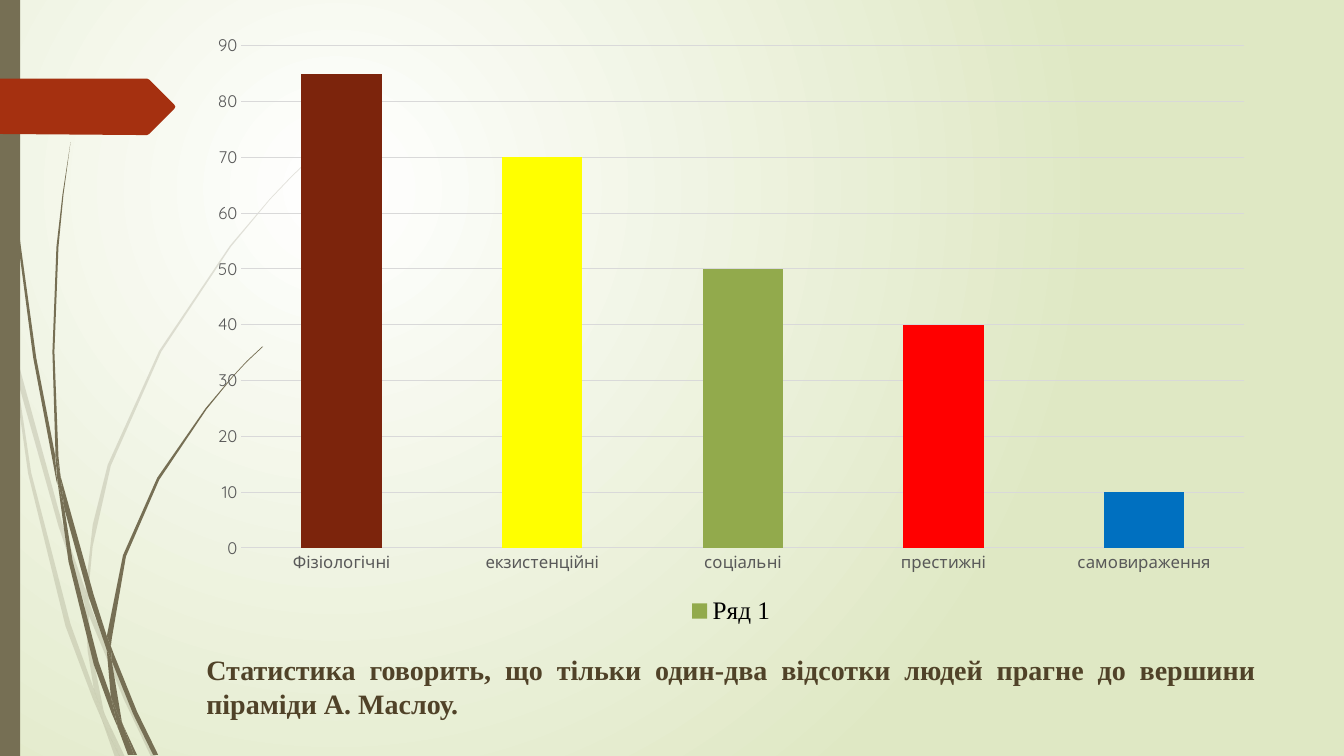
from lxml import etree
from pptx import Presentation
from pptx import util as u
from pptx.chart.data import CategoryChartData
from pptx.dml.color import RGBColor
from pptx.enum import chart as ch, shapes, text
from pptx.oxml.ns import qn

HUES = {
    "white": "FFFFFF", "pale": "DFE8C4", "stem": "766F54", "tag": "A53010",
    "grid": "D9D9D9", "axis": "595959", "black": "000000", "note": "504228",
    "green": "92AA4C", "brown": "7C240C", "yellow": "FFFF00",
    "red": "FF0000", "blue": "0070C0",
}
SANS, SERIF = "Quicksand", "Times New Roman"
NEEDS = {"Фізіологічні": 85, "екзистенційні": 70, "соціальні": 50,
         "престижні": 40, "самовираження": 10}
BARS = {0: "brown", 1: "yellow", 3: "red", 4: "blue"}

# Grass outlines, in hundredths of an inch
FAINT = [
    [(11, 350), (9, 322), (0, 282), (0, 299), (10, 344)],
    [(58, 522), (84, 599), (85, 586), (62, 520), (14, 345), (17, 376)],
    [(92, 607), (88, 596), (88, 610), (123, 694), (150, 751), (155, 751),
     (127, 692)],
    [(119, 751), (124, 751), (105, 711)],
    [(93, 683), (70, 619), (31, 469), (17, 376), (11, 350), (28, 470),
     (65, 621), (92, 693), (101, 714), (99, 707)],
    [(84, 599), (87, 646), (93, 683), (96, 692), (105, 711), (103, 706),
     (91, 646), (88, 610), (88, 608)],
    [(88, 584), (92, 542), (110, 462), (160, 349), (229, 245), (268, 198),
     (290, 175), (312, 154), (312, 153), (289, 175), (268, 197), (228, 244),
     (158, 348), (107, 461), (92, 521), (85, 584), (85, 586), (88, 596)],
    [(101, 714), (114, 751), (119, 751)],
    [(88, 608), (88, 610), (88, 596), (85, 586), (84, 599)],
    [(96, 692), (93, 683), (99, 707), (101, 714), (119, 751), (105, 711)],
]
SOLID = [
    [(7, 110), (17, 233), (33, 355), (56, 477), (57, 481), (55, 457),
     (55, 453), (36, 355), (19, 232), (8, 109), (5, 48), (4, 0), (3, 0),
     (4, 48)],
    [(88, 592), (106, 645), (106, 633), (106, 631), (93, 590), (60, 472),
     (64, 505)],
    [(113, 649), (110, 641), (111, 656), (132, 708), (152, 749), (157, 749),
     (136, 706)],
    [(110, 691), (98, 657), (72, 556), (64, 505), (57, 477), (68, 557),
     (93, 659), (111, 708), (117, 722), (116, 717)],
    [(60, 472), (58, 453), (54, 349), (58, 245), (63, 193), (70, 141),
     (62, 193), (56, 245), (52, 349), (55, 449)],
    [(133, 749), (136, 749), (122, 719)],
    [(57, 477), (64, 505), (60, 472), (55, 449), (55, 453)],
    [(111, 633), (125, 552), (158, 476), (205, 406), (231, 374), (245, 359),
     (261, 344), (260, 344), (245, 358), (231, 373), (204, 405), (156, 474),
     (122, 551), (106, 631), (110, 641)],
    [(117, 722), (127, 749), (131, 749)],
    [(106, 645), (110, 691), (116, 706), (122, 719), (121, 716), (111, 656),
     (109, 651)],
    [(106, 645), (109, 651), (111, 656), (110, 641), (106, 631)],
    [(116, 706), (110, 691), (116, 717), (117, 722), (130, 749), (133, 749),
     (122, 719)],
]
TAG = [(173, 108), (148, 133), (146, 134), (136, 134), (0, 133), (0, 78),
       (136, 78), (146, 78), (148, 79), (173, 104), (174, 106)]


def hue(name):
    return RGBColor.from_string(HUES[name])


def put(thing, **vals):
    for key, val in vals.items():
        setattr(thing, key, val)


class Deck:
    def __init__(self):
        self.show = Presentation()
        put(self.show, slide_width=u.Cm(33.87), slide_height=u.Cm(19.05))
        self.page = self.show.slides.add_slide(self.show.slide_layouts[6])
        self.items = self.page.shapes

    def type(self, font, size, color, face, bold=False):
        put(font, size=u.Pt(size), name=face, bold=bold)
        font.color.rgb = hue(color)

    def glow(self):
        fill = self.page.background.fill
        fill.gradient()
        for stop, name in zip(fill.gradient_stops, ("white", "pale")):
            stop.color.rgb = hue(name)
        grad = self.page.element.find(".//" + qn("a:gradFill"))
        line = grad.find(qn("a:lin"))
        ring = etree.Element(qn("a:path"), path="circle")
        etree.SubElement(ring, qn("a:fillToRect"), l="50000", t="50000",
                         r="100000", b="100000")
        grad.replace(line, ring)

    def paint(self, shape, color, alpha=100):
        shape.shadow.inherit = False
        shape.line.fill.background()
        shape.fill.solid()
        shape.fill.fore_color.rgb = hue(color)
        if alpha < 100:
            tone = shape.element.spPr.find(".//" + qn("a:srgbClr"))
            etree.SubElement(tone, qn("a:alpha"), val=str(alpha * 1000))

    def form(self, dots, color, alpha=100):
        pen = self.items.build_freeform(*dots[0], scale=u.Cm(2.54) / 100)
        pen.add_line_segments(dots[1:], close=True)
        self.paint(pen.convert_to_shape(), color, alpha)

    def block(self, box, color):
        kind = shapes.MSO_SHAPE.RECTANGLE
        self.paint(self.items.add_shape(kind, *map(u.Cm, box)), color)

    def chart(self, box, name, vals, tints):
        data = CategoryChartData()
        data.categories = list(vals)
        data.add_series(name, list(vals.values()))
        kind = ch.XL_CHART_TYPE.COLUMN_STACKED
        chart = self.items.add_chart(kind, *map(u.Cm, box), data).chart
        put(chart, has_title=False, has_legend=True)
        self.type(chart.font, 10, "black", SANS)

        # Bars
        plot = chart.plots[0]
        put(plot, gap_width=150, overlap=100, vary_by_categories=False)
        bars = plot.series[0]
        bars.format.fill.solid()
        bars.format.fill.fore_color.rgb = hue("green")
        for spot, tint in tints.items():
            fill = bars.points[spot].format.fill
            fill.solid()
            fill.fore_color.rgb = hue(tint)

        # Axes and grid
        cats, nums = chart.category_axis, chart.value_axis
        for axis in (cats, nums):
            put(axis, major_tick_mark=ch.XL_TICK_MARK.NONE,
                minor_tick_mark=ch.XL_TICK_MARK.NONE)
            self.type(axis.tick_labels.font, 12, "axis", SANS)
        put(nums, minimum_scale=0, maximum_scale=90, major_unit=10,
            has_major_gridlines=True)
        nums.format.line.fill.background()
        for part in (cats, nums.major_gridlines):
            part.format.line.color.rgb = hue("grid")
            part.format.line.width = u.Pt(0.75)

        # Legend
        put(chart.legend, position=ch.XL_LEGEND_POSITION.BOTTOM,
            include_in_layout=False)
        self.type(chart.legend.font, 18, "black", SERIF)

    def note(self, box, words):
        frame = self.items.add_textbox(*map(u.Cm, box)).text_frame
        put(frame, word_wrap=True,
            auto_size=text.MSO_AUTO_SIZE.SHAPE_TO_FIT_TEXT)
        para = frame.paragraphs[0]
        para.alignment = text.PP_ALIGN.JUSTIFY
        run = para.add_run()
        run.text = words
        self.type(run.font, 20, "note", SERIF, bold=True)


def main():
    deck = Deck()

    # Backdrop
    deck.glow()
    for blades, alpha in ((FAINT, 20), (SOLID, 100)):
        for blade in blades:
            deck.form(blade, "stem", alpha)
    deck.block((0, 0, 0.51, 19.05), "stem")
    deck.form(TAG, "tag")

    # Content
    deck.chart((4.95, 0.58, 26.95, 15.29), "Ряд 1", NEEDS, BARS)
    deck.note((4.95, 16.33, 26.95, 1.96),
              "Статистика говорить, що тільки один-два відсотки людей "
              "прагне до вершини піраміди А. Маслоу.")
    deck.show.save("out.pptx")


if __name__ == "__main__":
    main()
